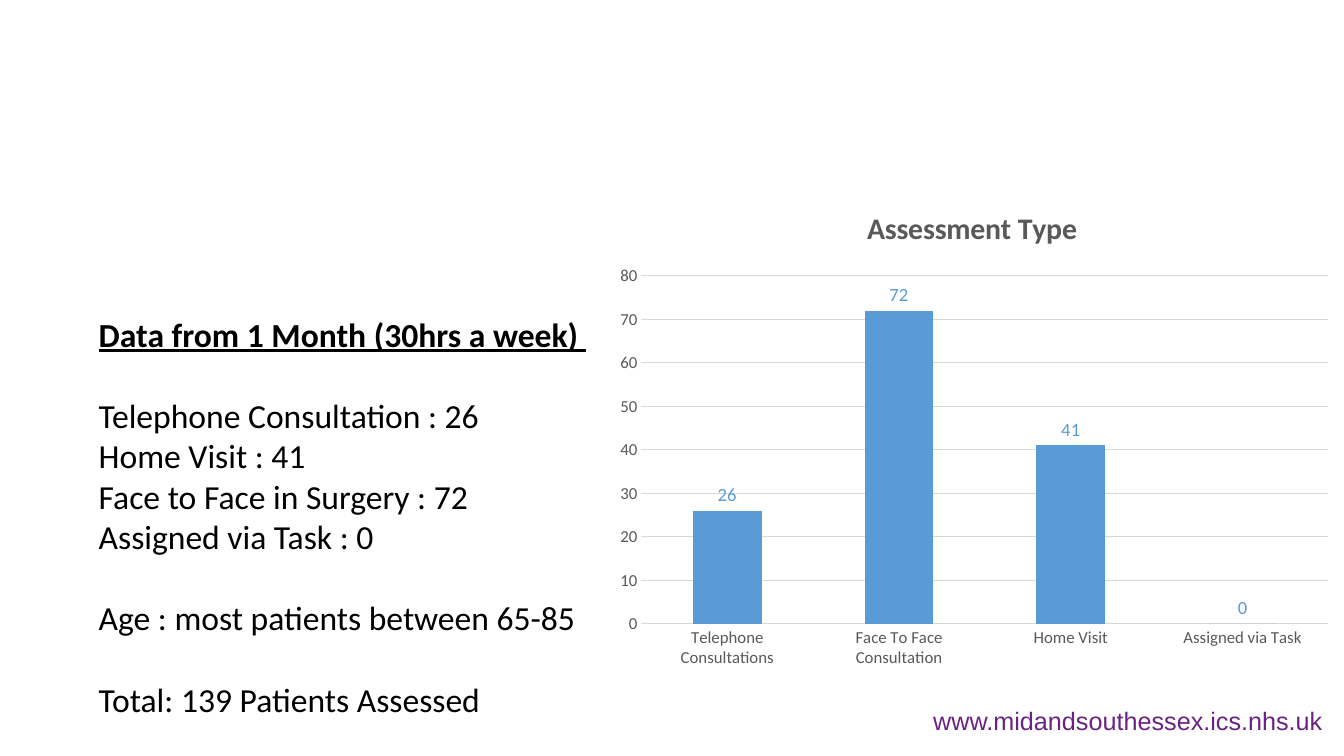
from lxml import etree
from pptx import Presentation
from pptx.chart.data import CategoryChartData
from pptx.dml.color import RGBColor
from pptx.enum.chart import XL_CHART_TYPE, XL_LABEL_POSITION, XL_TICK_MARK
from pptx.oxml import parse_xml
from pptx.oxml.ns import nsdecls, qn
from pptx.util import Pt

COLUMN = XL_CHART_TYPE.COLUMN_CLUSTERED
OUTSIDE_END = XL_LABEL_POSITION.OUTSIDE_END
NO_TICK = XL_TICK_MARK.NONE

BLACK, GREY, GRID = "000000", "595959", "D9D9D9"
BLUE, PURPLE = "5B9BD5", "6A2383"
BLANK_LINE = 29.3

ASSESSMENTS = {
    "Telephone Consultations": 26,
    "Face To Face Consultation": 72,
    "Home Visit": 41,
    "Assigned via Task": 0,
}
# Each group of lines is set off by one line of space
SUMMARY_GROUPS = [
    ["Telephone Consultation : 26", "Home Visit : 41",
     "Face to Face in Surgery : 72", "Assigned via Task : 0"],
    ["Age : most patients between 65-85"],
    ["Total: 139 Patients Assessed"],
]


def rgb(value):
    return RGBColor.from_string(value)


def style(font, size, color, name="Calibri", bold=False, underline=False):
    font.name, font.size = name, Pt(size)
    font.bold, font.underline = bold, underline
    font.color.rgb = rgb(color)


def add_text(tf, text, before=0, first=False, **fmt):
    p = tf.paragraphs[0] if first else tf.add_paragraph()
    if before:
        p.space_before = Pt(before)
    r = p.add_run()
    r.text = text
    style(r.font, **fmt)


def add_box(slide, x, y, w, h):
    tf = slide.shapes.add_textbox(Pt(x), Pt(y), Pt(w), Pt(h)).text_frame
    tf.word_wrap = False
    return tf


def add_summary(slide, x, y, w, h):
    tf = add_box(slide, x, y, w, h)
    add_text(tf, "Data from 1 Month (30hrs a week) ", first=True,
             size=24, color=BLACK, bold=True, underline=True)
    for group in SUMMARY_GROUPS:
        for i, line in enumerate(group):
            add_text(tf, line, before=0 if i else BLANK_LINE,
                     size=24, color=BLACK)


def add_footer(slide, x, y, w, h):
    tf = add_box(slide, x, y, w, h)
    add_text(tf, "www.midandsouthessex.ics.nhs.uk", first=True,
             size=18, color=PURPLE, name="Arial")


def set_plot_layout(chart, x, y, w, h):
    """Place the inner plot area, in fractions of the chart."""
    plot_area = chart._chartSpace.chart.plotArea
    for old in plot_area.findall(qn("c:layout")):
        plot_area.remove(old)
    layout = parse_xml(f"<c:layout {nsdecls('c')}><c:manualLayout/></c:layout>")
    values = {"layoutTarget": "inner", "xMode": "edge", "yMode": "edge",
              "x": x, "y": y, "w": w, "h": h}
    for tag, val in values.items():
        etree.SubElement(layout[0], qn(f"c:{tag}")).set("val", str(val))
    plot_area.insert(0, layout)


def add_assessment_chart(slide, x, y, w, h):
    data = CategoryChartData(number_format="0")
    data.categories = list(ASSESSMENTS)
    data.add_series("Assessment Type", list(ASSESSMENTS.values()))
    chart = slide.shapes.add_chart(COLUMN, Pt(x), Pt(y), Pt(w), Pt(h), data).chart
    style(chart.font, 10, BLACK)
    chart.has_legend = False
    chart.has_title = True
    add_text(chart.chart_title.text_frame, "Assessment Type", first=True,
             size=21.3, color=GREY, bold=True)
    chart.chart_title.include_in_layout = False
    set_plot_layout(chart, 0.055, 0.18, 0.925, 0.7)

    # Axes
    for axis in (chart.category_axis, chart.value_axis):
        style(axis.tick_labels.font, 12, GREY)
        axis.major_tick_mark = axis.minor_tick_mark = NO_TICK
        axis.format.line.fill.background()
    value_axis = chart.value_axis
    value_axis.minimum_scale, value_axis.maximum_scale = 0, 80
    value_axis.major_unit = 10
    grid = value_axis.major_gridlines.format.line
    grid.width = Pt(0.75)
    grid.color.rgb = rgb(GRID)

    # Columns and their values
    plot = chart.plots[0]
    plot.gap_width = 150
    plot.vary_by_categories = False
    fill = plot.series[0].format.fill
    fill.solid()
    fill.fore_color.rgb = rgb(BLUE)
    plot.has_data_labels = True
    labels = plot.data_labels
    labels.show_value = True
    labels.position = OUTSIDE_END
    style(labels.font, 13.3, BLUE)


def main():
    prs = Presentation()
    prs.slide_width, prs.slide_height = Pt(960), Pt(540)
    slide = prs.slides.add_slide(prs.slide_layouts[6])
    add_footer(slide, 659.5, 500.4, 295.2, 28.8)
    add_assessment_chart(slide, 429, 133.2, 530.6, 355)
    add_summary(slide, 63.4, 220.3, 365.8, 298)
    prs.save("out.pptx")


if __name__ == "__main__":
    main()
